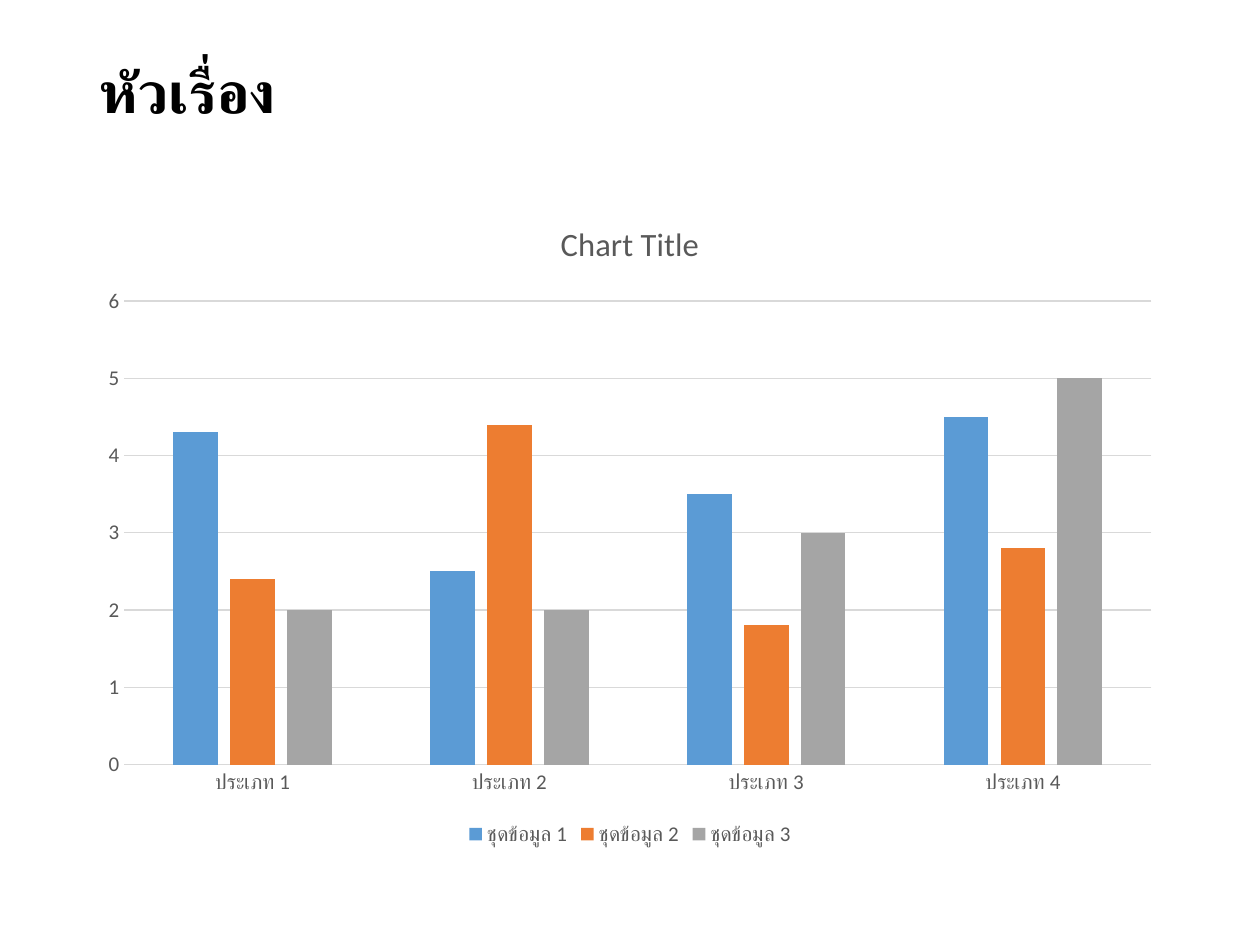
from pptx import Presentation
from pptx.chart.data import CategoryChartData
from pptx.dml.color import RGBColor
from pptx.enum.chart import XL_CHART_TYPE, XL_LEGEND_POSITION, XL_TICK_MARK
from pptx.enum.text import MSO_ANCHOR, MSO_AUTO_SIZE, PP_ALIGN
from pptx.util import Inches, Pt

CLUSTERED = XL_CHART_TYPE.COLUMN_CLUSTERED
BOTTOM = XL_LEGEND_POSITION.BOTTOM
NO_TICK = XL_TICK_MARK.NONE
FONT, GREY, RULE = "Calibri", "595959", "D9D9D9"


def rgb(value):
    return RGBColor.from_string(value)


def write(tf, text=None, size=12, color=GREY, bold=False):
    """Fill a text frame with one formatted paragraph."""
    p = tf.paragraphs[0]
    r = p.add_run()
    r.text = text
    r.font.name, r.font.size, r.font.bold = FONT, Pt(size), bold
    r.font.color.rgb = rgb(color)
    return p


prs = Presentation()
prs.slide_width, prs.slide_height = Inches(10), Inches(7.5)
s = prs.slides.add_slide(prs.slide_layouts[5])
left, width = Inches(0.69), Inches(8.62)

# Title
sp = s.shapes.title
sp.left, sp.top, sp.width, sp.height = left, Inches(0.03), width, Inches(1.45)
tf = sp.text_frame
tf.auto_size = MSO_AUTO_SIZE.NONE
tf.vertical_anchor = MSO_ANCHOR.MIDDLE
p = write(tf, "หัวเรื่อง", size=33, color="000000", bold=True)
p.alignment = PP_ALIGN.LEFT
p.line_spacing = 0.9

# Chart data
series = [
    ("5B9BD5", (4.3, 2.5, 3.5, 4.5)),
    ("ED7D31", (2.4, 4.4, 1.8, 2.8)),
    ("A5A5A5", (2, 2, 3, 5)),
]
data = CategoryChartData()
data.categories = [f"ประเภท {i}" for i in range(1, 5)]
for i, (color, values) in enumerate(series, 1):
    data.add_series(f"ชุดข้อมูล {i}", values)

# Column chart
chart = s.shapes.add_chart(CLUSTERED, left, Inches(1.55), width, Inches(5.21), data).chart
chart.font.name, chart.font.size = FONT, Pt(10)
chart.has_title = True
write(chart.chart_title.text_frame, "Chart Title", size=18.6)
chart.chart_title.include_in_layout = False
plot = chart.plots[0]
plot.gap_width, plot.overlap, plot.vary_by_categories = 219, -27, False
for ser, (color, values) in zip(plot.series, series):
    ser.format.fill.solid()
    ser.format.fill.fore_color.rgb = rgb(color)

# Axes and legend
cat, val = chart.category_axis, chart.value_axis
val.minimum_scale, val.maximum_scale, val.major_unit = 0, 6, 1
val.has_major_gridlines = True
for axis in (cat, val):
    axis.major_tick_mark = axis.minor_tick_mark = NO_TICK
for line in (cat.format.line, val.major_gridlines.format.line):
    line.color.rgb, line.width = rgb(RULE), Pt(0.75)
val.format.line.fill.background()
chart.has_legend = True
chart.legend.position, chart.legend.include_in_layout = BOTTOM, False
for font in (cat.tick_labels.font, val.tick_labels.font, chart.legend.font):
    font.name, font.size, font.color.rgb = FONT, Pt(12), rgb(GREY)

prs.save("out.pptx")
